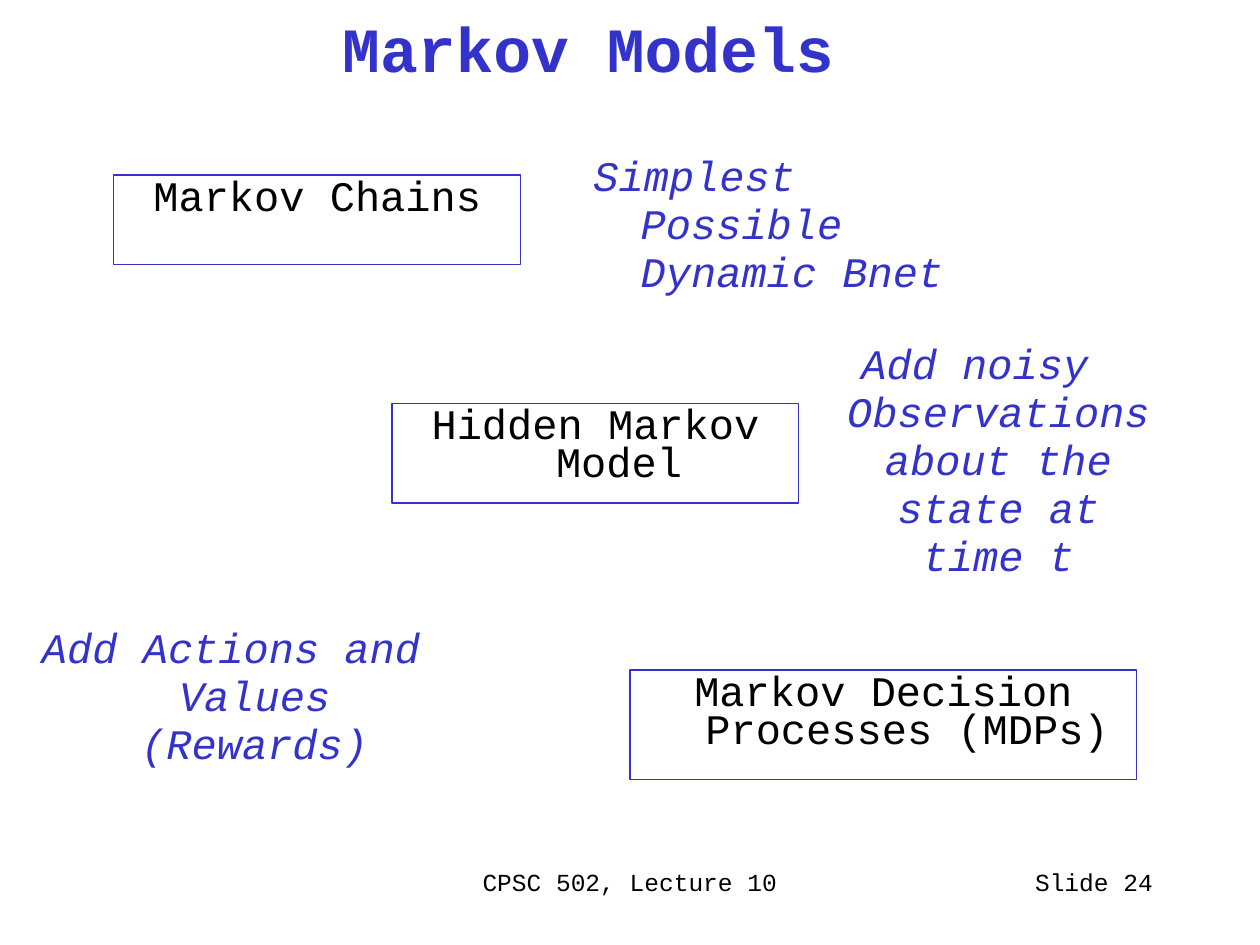
from dataclasses import dataclass, field
from typing import Any

import pptx
import pptx.dml.color
import pptx.enum.shapes
import pptx.enum.text
import pptx.util

Pt = pptx.util.Pt
Align = pptx.enum.text.PP_ALIGN
Anchor = pptx.enum.text.MSO_ANCHOR


@dataclass(frozen=True)
class Theme:
    typeface: str = "Courier New"
    ink: str = "000000"
    accent: str = "3333CC"
    title_size: float = 36
    body_size: float = 24
    footer_size: float = 14


@dataclass(frozen=True)
class Style:
    size: float
    color: str
    align: Any = Align.CENTER
    anchor: Any = Anchor.TOP
    hanging: float = 0
    spacing: float = 1.0
    emphasis: dict[str, bool] = field(default_factory=dict)


@dataclass(frozen=True)
class Block:
    wording: str
    left: float
    top: float
    width: float
    height: float
    style: Style
    outline: float = 0


THEME = Theme()
HEADING = Style(THEME.title_size, THEME.accent, anchor=Anchor.MIDDLE, emphasis={"bold": True})
MODEL = Style(THEME.body_size, THEME.ink, hanging=27, spacing=0.75)
REMARK = Style(THEME.body_size, THEME.accent, hanging=27, spacing=0.95, emphasis={"italic": True})
LEFT_REMARK = Style(THEME.body_size, THEME.accent, Align.LEFT, hanging=27, spacing=0.95,
                    emphasis={"italic": True})
FOOTER = Style(THEME.footer_size, THEME.ink)
PAGE = Style(THEME.footer_size, THEME.ink, Align.RIGHT)

TITLE = Block("Markov Models", 0, 0, 672, 54, HEADING)
FOOTERS = [
    Block("CPSC 502, Lecture 10", 246, 492, 228, 36, FOOTER),
    Block("Slide 24", 516, 492, 150, 36, PAGE),
]
MODELS = [
    Block("Markov Chains", 65, 100, 232.5, 51, MODEL, 0.75),
    Block("Hidden Markov Model", 224, 230.5, 232.5, 57, MODEL, 0.75),
    Block("Markov Decision Processes (MDPs)", 360, 383, 289.5, 62.5, MODEL, 1),
]
REMARKS = [
    Block("Simplest Possible Dynamic Bnet", 332, 84, 214, 62, LEFT_REMARK),
    Block("Add noisy Observations about the state at time t", 450, 191.5, 214, 62, REMARK),
    Block("Add Actions and Values (Rewards)", 0, 354, 264, 62, REMARK),
]


def rgb(color: str) -> Any:
    return pptx.dml.color.RGBColor.from_string(color)


def apply(target: Any, values: dict[str, Any]) -> None:
    for attribute, value in values.items():
        setattr(target, attribute, value)


def bounds(block: Block) -> tuple[Any, ...]:
    return tuple(Pt(n) for n in (block.left, block.top, block.width, block.height))


def write(shape: Any, block: Block) -> None:
    style = block.style
    frame = shape.text_frame
    apply(frame, {
        "text": block.wording,
        "word_wrap": True,
        "auto_size": pptx.enum.text.MSO_AUTO_SIZE.NONE,
        "vertical_anchor": style.anchor,
    })
    paragraph = frame.paragraphs[0]
    apply(paragraph, {"alignment": style.align, "line_spacing": style.spacing})
    if style.hanging:
        properties = paragraph._p.get_or_add_pPr()
        properties.set("marL", str(Pt(style.hanging)))
        properties.set("indent", str(-Pt(style.hanging)))
    font = paragraph.runs[0].font
    apply(font, {"name": THEME.typeface, "size": Pt(style.size), **style.emphasis})
    font.color.rgb = rgb(style.color)


def draw_title(slide: Any, block: Block) -> None:
    heading = slide.shapes.title
    apply(heading, dict(zip(("left", "top", "width", "height"), bounds(block))))
    write(heading, block)


def draw_text(slide: Any, block: Block) -> None:
    write(slide.shapes.add_textbox(*bounds(block)), block)


def draw_model(slide: Any, block: Block) -> None:
    model = slide.shapes.add_shape(pptx.enum.shapes.MSO_SHAPE.RECTANGLE, *bounds(block))
    model.shadow.inherit = False
    model.fill.background()
    model.line.color.rgb = rgb(THEME.accent)
    model.line.width = Pt(block.outline)
    write(model, block)


def main() -> None:
    deck = pptx.Presentation()
    apply(deck, {"slide_width": Pt(720), "slide_height": Pt(540)})
    slide = deck.slides.add_slide(deck.slide_layouts.get_by_name("Title Only"))
    draw_title(slide, TITLE)
    for footer in FOOTERS:
        draw_text(slide, footer)
    for model in MODELS:
        draw_model(slide, model)
    for remark in REMARKS:
        draw_text(slide, remark)
    deck.save("out.pptx")


if __name__ == "__main__":
    main()
